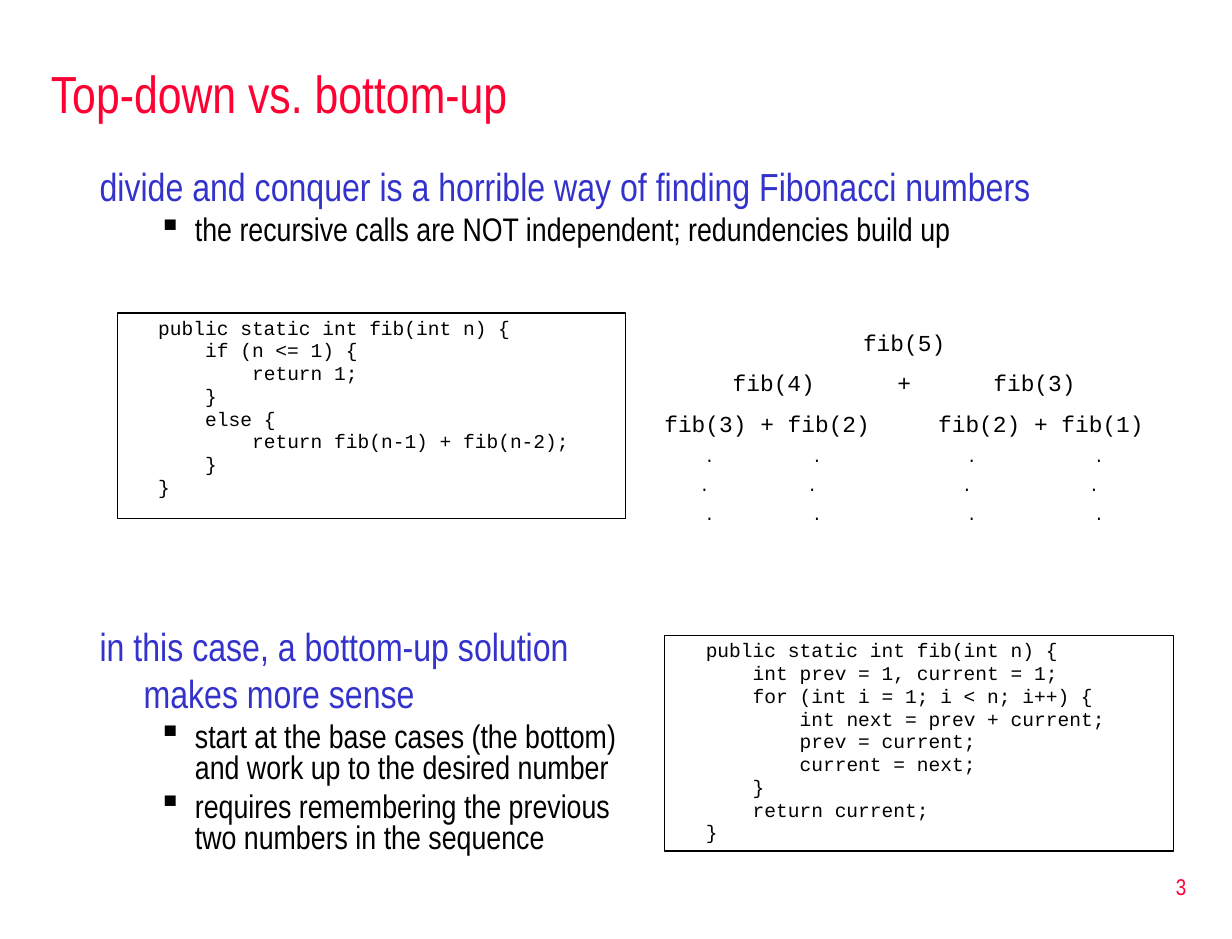
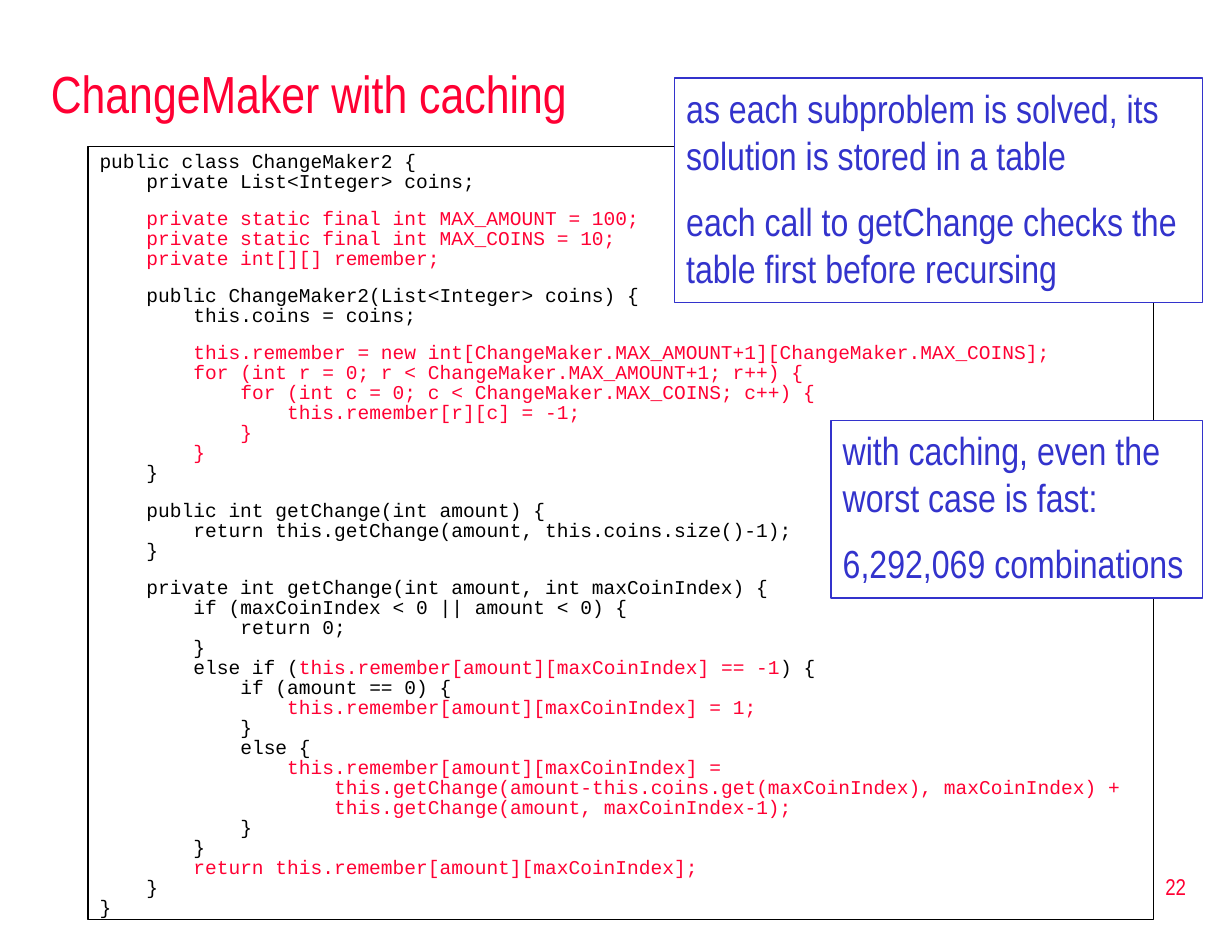
from dataclasses import dataclass

from lxml.etree import SubElement
from pptx import Presentation
from pptx.dml.color import RGBColor
from pptx.enum.shapes import MSO_SHAPE
from pptx.enum.text import MSO_ANCHOR, MSO_AUTO_SIZE, PP_ALIGN
from pptx.oxml.ns import qn
from pptx.util import Pt


@dataclass(frozen=True)
class Theme:
    red: RGBColor = RGBColor(0xFF, 0x00, 0x33)
    blue: RGBColor = RGBColor(0x33, 0x33, 0xCC)
    black: RGBColor = RGBColor(0, 0, 0)
    white: RGBColor = RGBColor(0xFF, 0xFF, 0xFF)
    text_font: str = "Arial Narrow"
    code_font: str = "Courier New"
    title_size: float = 32
    heading_size: float = 24
    bullet_size: float = 20
    label_size: float = 14
    code_size: float = 12
    dot_size: float = 10


THEME = Theme()
CODE_CHARACTER = 7.2  # width of one code character
MARK = "§"  # switches the highlight on and off within a code line

# Boxes are left, top, width, height
TITLE_BOX = (24, 30, 714, 54)
NUMBER_BOX = (577.5, 525, 157.5, 38)

RECURSIVE_FIB = """\
public static int fib(int n) {
    if (n <= 1) {
        return 1;
    }
    else {
        return fib(n-1) + fib(n-2);
    }
}"""

ITERATIVE_FIB = """\
public static int fib(int n) {
    int prev = 1, current = 1;
    for (int i = 1; i < n; i++) {
        int next = prev + current;
        prev = current;
        current = next;
    }
    return current;
}"""

CHANGE_MAKER_FIELDS = """\
public class ChangeMaker2 {
    private List<Integer> coins;

    §private static final int MAX_AMOUNT = 100;
    §private static final int MAX_COINS = 10;
    §private int[][] remember;"""

CHANGE_MAKER_CONSTRUCTOR = """\
    public ChangeMaker2(List<Integer> coins) {
        this.coins = coins;

        §this.remember = new int[ChangeMaker.MAX_AMOUNT+1][ChangeMaker.MAX_COINS];
        §for (int r = 0; r < ChangeMaker.MAX_AMOUNT+1; r++) {
            §for (int c = 0; c < ChangeMaker.MAX_COINS; c++) {
                §this.remember[r][c] = -1;
            §}
        §}
    }"""

CHANGE_MAKER_PUBLIC_METHOD = """\
    public int getChange(int amount) {
        return this.getChange(amount, this.coins.size()-1);
    }"""

CHANGE_MAKER_PRIVATE_METHOD = """\
    private int getChange(int amount, int maxCoinIndex) {
        if (maxCoinIndex < 0 || amount < 0) {
            return 0;
        }
        else if (§this.remember[amount][maxCoinIndex] == -1§) {
            if (amount == 0) {
                §this.remember[amount][maxCoinIndex] = 1;
            }
            else {
                §this.remember[amount][maxCoinIndex] =
                    §this.getChange(amount-this.coins.get(maxCoinIndex), maxCoinIndex) +
                    §this.getChange(amount, maxCoinIndex-1);
            }
        }
        §return this.remember[amount][maxCoinIndex];
    }
}"""


# Shared helpers
def place(shape, box):
    shape.left, shape.top, shape.width, shape.height = map(Pt, box)


def format_run(run, font, size, color):
    run.font.name = font
    run.font.size = Pt(size)
    run.font.color.rgb = color


def format_paragraph(paragraph, font, size, color):
    for run in paragraph.runs:
        format_run(run, font, size, color)


def indent(paragraph, margin, first_line=0):
    properties = paragraph._p.get_or_add_pPr()
    properties.set("marL", str(Pt(margin)))
    properties.set("indent", str(Pt(first_line)))
    return properties


def add_paragraphs(text_frame, count):
    return [text_frame.paragraphs[0]] + [text_frame.add_paragraph() for _ in range(count - 1)]


def add_text_frame(slide, box):
    text_frame = slide.shapes.add_textbox(*map(Pt, box)).text_frame
    text_frame.word_wrap = True
    return text_frame


def add_framed_box(slide, box, line_color, line_width, fill=None):
    shape = slide.shapes.add_shape(MSO_SHAPE.RECTANGLE, *map(Pt, box))
    shape.shadow.inherit = False
    shape.line.color.rgb = line_color
    shape.line.width = Pt(line_width)
    if fill is None:
        shape.fill.background()
    else:
        shape.fill.solid()
        shape.fill.fore_color.rgb = fill
    shape.text_frame.word_wrap = True
    shape.text_frame.vertical_anchor = MSO_ANCHOR.TOP
    return shape.text_frame


# Title and slide number
def start_slide(presentation, title, number):
    slide = presentation.slides.add_slide(presentation.slide_layouts[5])
    place(slide.shapes.title, TITLE_BOX)
    title_frame = slide.shapes.title.text_frame
    title_frame.text = title
    title_frame.auto_size = MSO_AUTO_SIZE.NONE
    number_frame = add_text_frame(slide, NUMBER_BOX)
    number_frame.text = str(number)
    for text_frame, size, alignment in (
        (title_frame, THEME.title_size, PP_ALIGN.LEFT),
        (number_frame, THEME.label_size, PP_ALIGN.RIGHT),
    ):
        text_frame.vertical_anchor = MSO_ANCHOR.MIDDLE
        text_frame.paragraphs[0].alignment = alignment
        format_paragraph(text_frame.paragraphs[0], THEME.text_font, size, THEME.red)
    return slide


# Heading with bullets below it
def add_points(slide, box, heading, bullets):
    paragraphs = add_paragraphs(add_text_frame(slide, box), 1 + len(bullets))
    paragraphs[0].text = heading
    indent(paragraphs[0], 27, -27)
    format_paragraph(paragraphs[0], THEME.text_font, THEME.heading_size, THEME.blue)
    for paragraph, bullet in zip(paragraphs[1:], bullets):
        paragraph.text = bullet
        paragraph.level = 1
        paragraph.line_spacing = 0.8
        paragraph.space_before = Pt(4.5)
        properties = indent(paragraph, 58.5, -22.5)
        SubElement(properties, qn("a:buChar")).set("char", "▪")
        format_paragraph(paragraph, THEME.text_font, THEME.bullet_size, THEME.black)


# Code listing: nesting becomes indents, empty lines become space before
def add_code(slide, box, code, line_height, line_gap=0, margin=0):
    text_frame = add_framed_box(slide, box, THEME.black, 0.75)
    lines = code.splitlines()
    filled = [index for index, line in enumerate(lines) if line]
    for paragraph, index in zip(add_paragraphs(text_frame, len(filled)), filled):
        line = lines[index]
        statement = line.lstrip()
        paragraph.alignment = PP_ALIGN.LEFT
        paragraph.line_spacing = Pt(line_height)
        if index:
            paragraph.space_before = Pt(line_gap if lines[index - 1] else 10.5)
        indent(paragraph, margin + (len(line) - len(statement)) * CODE_CHARACTER)
        for position, part in enumerate(statement.split(MARK)):
            if part:
                run = paragraph.add_run()
                run.text = part
                color = THEME.red if position % 2 else THEME.black
                format_run(run, THEME.code_font, THEME.code_size, color)


# Tree of calls: each row is centred on its own tab stops
def add_call_tree(slide, box):
    middle = box[2] / 2 - 7.2
    dots = (-119.5, -53.5, 41.5, 119.5)
    rows = [
        (["fib(5)"], (0,), THEME.label_size),
        (["fib(4)", "+", "fib(3)"], (-80, 0, 80), THEME.label_size),
        (["fib(3) + fib(2)", "fib(2) + fib(1)"], (-84, 84), THEME.label_size),
    ]
    rows += [(["."] * 4, [dot - shift for dot in dots], THEME.dot_size) for shift in (0, 3, 0)]
    paragraphs = add_paragraphs(add_text_frame(slide, box), len(rows))
    for paragraph, (labels, offsets, size) in zip(paragraphs, rows):
        paragraph.text = "".join("\t" + label for label in labels)
        paragraph.alignment = PP_ALIGN.LEFT
        paragraph.space_before = Pt(size * 0.57)
        tab_list = SubElement(paragraph._p.get_or_add_pPr(), qn("a:tabLst"))
        for offset in offsets:
            tab = SubElement(tab_list, qn("a:tab"))
            tab.set("pos", str(Pt(middle + offset)))
            tab.set("algn", "ctr")
        format_paragraph(paragraph, THEME.code_font, size, THEME.black)


# Callout laid over the listing
def add_callout(slide, box, sentences):
    text_frame = add_framed_box(slide, box, THEME.blue, 1, THEME.white)
    for paragraph, sentence in zip(add_paragraphs(text_frame, len(sentences)), sentences):
        paragraph.text = sentence
        paragraph.alignment = PP_ALIGN.LEFT
        paragraph.space_before = Pt(THEME.heading_size / 2)
        format_paragraph(paragraph, THEME.text_font, THEME.heading_size, THEME.blue)


# Slides
def build_comparison_slide(presentation):
    slide = start_slide(presentation, "Top-down vs. bottom-up", 3)
    add_points(slide, (54, 96, 685.5, 72),
               "divide and conquer is a horrible way of finding Fibonacci numbers",
               ["the recursive calls are NOT independent; redundencies build up"])
    add_code(slide, (72, 192, 312, 126), RECURSIVE_FIB, 12.5, 1.45, 18)
    add_call_tree(slide, (378, 198, 354, 146))
    add_points(slide, (54, 378, 348, 132),
               "in this case, a bottom-up solution makes more sense",
               ["start at the base cases (the bottom) and work up to the desired number",
                "requires remembering the previous two numbers in the sequence"])
    add_code(slide, (408, 390, 312, 132), ITERATIVE_FIB, 12.5, 1.45, 18)


def build_caching_slide(presentation):
    slide = start_slide(presentation, "ChangeMaker with caching", 22)
    code = "\n\n".join([CHANGE_MAKER_FIELDS, CHANGE_MAKER_CONSTRUCTOR,
                        CHANGE_MAKER_PUBLIC_METHOD, CHANGE_MAKER_PRIVATE_METHOD])
    add_code(slide, (54, 90, 654, 474), code, 12.27)
    add_callout(slide, (510, 258, 228, 109),
                ["with caching, even the worst case is fast:", "6,292,069 combinations"])
    add_callout(slide, (414, 48, 324, 137.5),
                ["as each subproblem is solved, its solution is stored in a table",
                 "each call to getChange checks the table first before recursing"])


def main():
    presentation = Presentation()
    presentation.slide_width, presentation.slide_height = Pt(756), Pt(576)
    build_comparison_slide(presentation)
    build_caching_slide(presentation)
    presentation.save("out.pptx")


if __name__ == "__main__":
    main()
